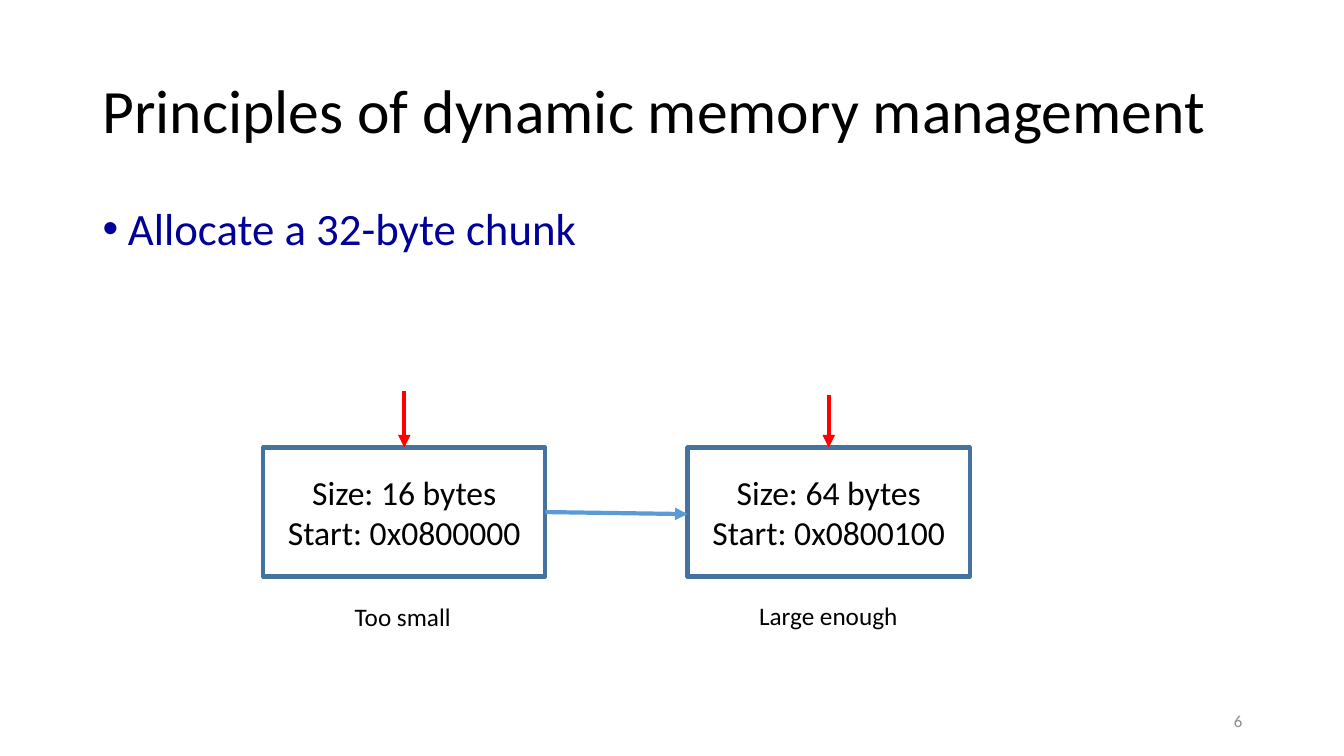
from dataclasses import dataclass

from lxml.etree import SubElement
from pptx import Presentation
from pptx.dml.color import RGBColor
from pptx.enum.shapes import MSO_CONNECTOR, MSO_SHAPE
from pptx.enum.text import MSO_ANCHOR, PP_ALIGN
from pptx.oxml.ns import qn
from pptx.util import Pt

TITLE = "Principles of dynamic memory management"
BULLET = "Allocate a 32-byte chunk"
PAGE_NUMBER = "6"
# arrow_top, verdict_at: px
CHUNKS = [
    {"lines": ["Size: 16 bytes", "Start: 0x0800000"], "arrow_top": 388,
     "verdict": "Too small", "verdict_at": (342, 592, 116, 40)},
    {"lines": ["Size: 64 bytes", "Start: 0x0800100"], "arrow_top": 392,
     "verdict": "Large enough", "verdict_at": (743, 591, 159, 40)},
]

PX = 9144  # EMU per px, 100 px to the inch
SLIDE_W, SLIDE_H = 1333, 750
CHUNK_X, CHUNK_Y, CHUNK_W, CHUNK_H = 261, 444, 280, 128
CHUNK_STEP = 421
LINK_DROP = 2
INDENT = 25


@dataclass(frozen=True)
class Theme:
    font: str = "Calibri"
    text: str = "000000"
    bullet: str = "000099"
    page: str = "8C8C8C"
    border: str = "43739E"
    link: str = "5B9BD5"
    pointer: str = "FF0000"
    title_size: int = 44
    bullet_size: int = 32
    chunk_size: int = 24
    verdict_size: int = 18
    page_size: int = 12
    stroke: int = 3


THEME = Theme()


def emu(*lengths):
    return [n * PX for n in lengths]


def write(shape, lines, size, color=THEME.text, anchor=MSO_ANCHOR.TOP,
          wrap=True, **paragraph_format):
    tf = shape.text_frame
    tf.word_wrap = wrap
    tf.vertical_anchor = anchor
    for i, line in enumerate(lines):
        p = tf.paragraphs[0] if i == 0 else tf.add_paragraph()
        for name, value in paragraph_format.items():
            setattr(p, name, value)
        r = p.add_run()
        r.text = line
        r.font.name = THEME.font
        r.font.size = Pt(size)
        r.font.color.rgb = RGBColor.from_string(color)
    return tf


def add_text(s, box, line, size, **options):
    return write(s.shapes.add_textbox(*emu(*box)), [line], size, **options)


def add_bullet(p):
    pPr = p._p.get_or_add_pPr()
    pPr.set("marL", str(INDENT * PX))
    pPr.set("indent", str(-INDENT * PX))
    SubElement(pPr, qn("a:buFont"), typeface="Arial")
    SubElement(pPr, qn("a:buChar"), char="•")


def set_line(shape, color):
    shape.line.color.rgb = RGBColor.from_string(color)
    shape.line.width = Pt(THEME.stroke)


def add_arrow(s, start, end, color):
    arrow = s.shapes.add_connector(MSO_CONNECTOR.STRAIGHT, *emu(*start, *end))
    set_line(arrow, color)
    SubElement(arrow.line._get_or_add_ln(), qn("a:tailEnd"), type="triangle")
    SubElement(arrow._element.spPr, qn("a:effectLst"))


def add_chunk(s, x, chunk):
    """Draw one memory chunk with its pointer above and verdict below."""
    box = s.shapes.add_shape(MSO_SHAPE.RECTANGLE,
                             *emu(x, CHUNK_Y, CHUNK_W, CHUNK_H))
    box.shadow.inherit = False
    box.fill.background()
    set_line(box, THEME.border)
    write(box, chunk["lines"], THEME.chunk_size, anchor=MSO_ANCHOR.MIDDLE,
          alignment=PP_ALIGN.CENTER)
    center = x + CHUNK_W // 2
    add_arrow(s, (center, chunk["arrow_top"]), (center, CHUNK_Y), THEME.pointer)
    add_text(s, chunk["verdict_at"], chunk["verdict"], THEME.verdict_size,
             wrap=False)


def main():
    prs = Presentation()
    prs.slide_width, prs.slide_height = emu(SLIDE_W, SLIDE_H)
    s = prs.slides.add_slide(prs.slide_layouts[6])

    add_text(s, (92, 40, 1150, 145), TITLE, THEME.title_size,
             anchor=MSO_ANCHOR.MIDDLE, line_spacing=0.9)
    body = add_text(s, (92, 200, 1150, 219), BULLET, THEME.bullet_size,
                    color=THEME.bullet, line_spacing=0.9, space_before=Pt(10))
    add_bullet(body.paragraphs[0])
    add_text(s, (942, 695, 300, 40), PAGE_NUMBER, THEME.page_size,
             color=THEME.page, anchor=MSO_ANCHOR.MIDDLE,
             alignment=PP_ALIGN.RIGHT)

    middle = CHUNK_Y + CHUNK_H // 2
    for i, chunk in enumerate(CHUNKS):
        x = CHUNK_X + i * CHUNK_STEP
        add_chunk(s, x, chunk)
        if i:
            previous_right = x - CHUNK_STEP + CHUNK_W
            add_arrow(s, (previous_right, middle), (x, middle + LINK_DROP),
                      THEME.link)

    prs.save("out.pptx")


if __name__ == "__main__":
    main()
